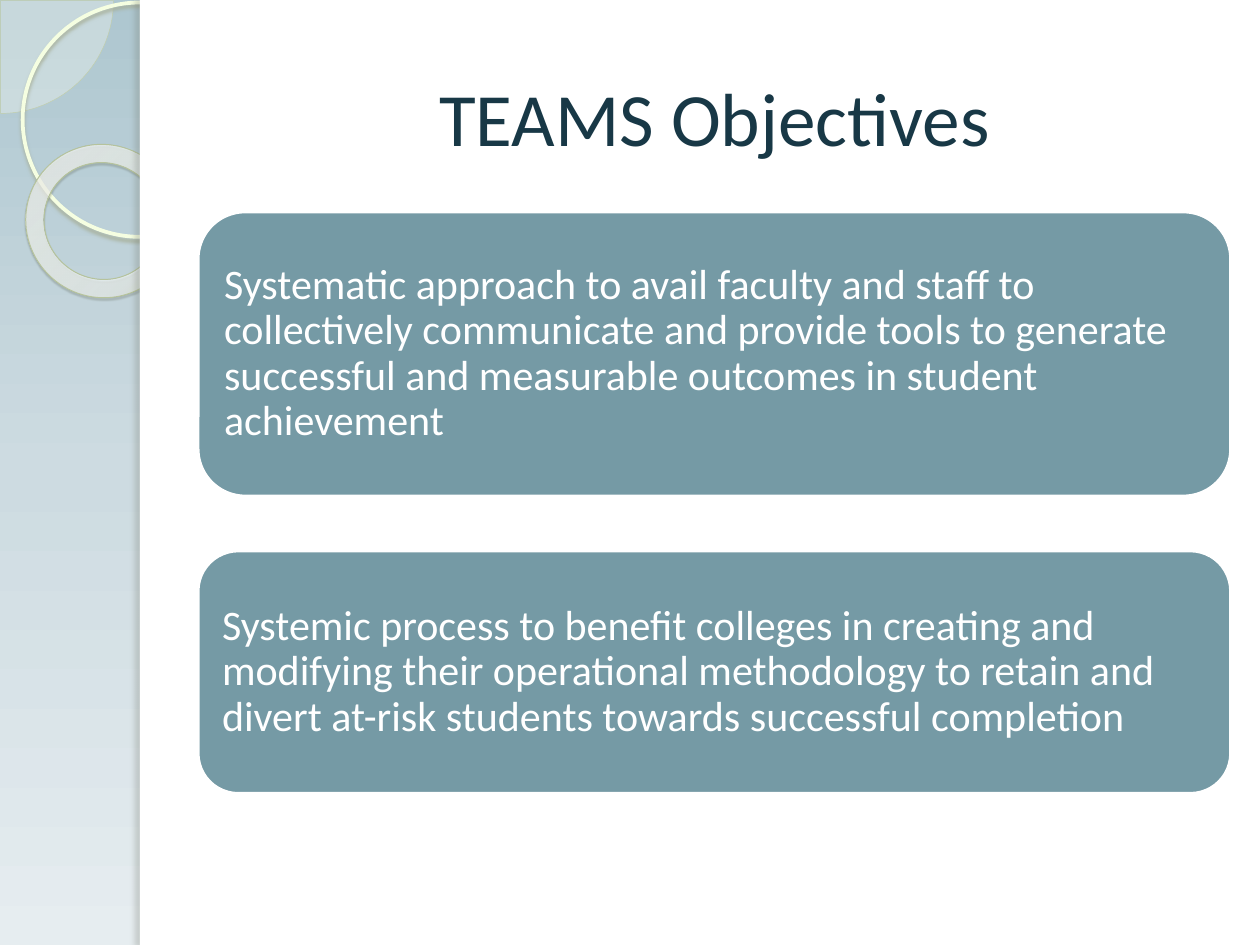
from lxml.etree import SubElement
from pptx import Presentation
from pptx.dml.color import RGBColor
from pptx.enum.shapes import MSO_SHAPE
from pptx.enum.text import MSO_ANCHOR, PP_ALIGN
from pptx.oxml.ns import qn
from pptx.util import Inches, Pt

# Content
HEADING = "TEAMS Objectives"
OBJECTIVES = [
    # text, top, height
    ("Systematic approach to avail faculty and staff to collectively communicate "
     "and provide tools to generate successful and measurable outcomes in student "
     "achievement", 1.68, 2.26),
    ("Systemic process to benefit colleges in creating and modifying their "
     "operational methodology to retain and divert at-risk students towards "
     "successful completion", 4.37, 1.93),
]
CONTENT_LEFT, CONTENT_WIDTH = 1.57, 8.2
PANEL_LEFT = 1.11

# Gradient stops: position, colour, opacity in percent
BACKDROP = [(0, "AEC7D0", 100), (50, "CDDBE1", 100), (100, "E6EDF0", 100)]
RING_GLOW = [(0, "FCFEF7", 70), (70, "FEFFFB", 55), (100, "CEE59D", 60)]

# Decoration, back to front; shadow: colour, opacity, blur, distance, angle
DECORATION = [
    dict(kind=MSO_SHAPE.PIE, box=(-0.89, -0.89, 1.79, 1.79), adjust=(0, 54.02),
         fill="FAFDF5", opacity=33, line=("C2CEA9", 0.25)),
    dict(kind=MSO_SHAPE.OVAL, box=(0.18, 0.02, 1.86, 1.86),
         line=("F5FEE1", 2.15), shadow=("A6AE96", 85, 2, 2, 90)),
    dict(kind=MSO_SHAPE.DONUT, box=(0.2, 1.15, 1.23, 1.21), adjust=(0.12,),
         rotation=38.6, stops=RING_GLOW, line=("B6C39C", 0.58),
         shadow=("535948", 35, 1, 1.2, 75)),
    dict(kind=MSO_SHAPE.RECTANGLE, box=(PANEL_LEFT, 0, 10 - PANEL_LEFT, 7.5),
         fill="FFFFFF"),
    dict(kind=MSO_SHAPE.RECTANGLE, box=(PANEL_LEFT, 0, 0.08, 7.5),
         fill="FFFFFF", shadow=("6F7367", 25, 3, 3, 180)),
]


def colour(hex_value):
    return RGBColor.from_string(hex_value)


def add_colour(parent, hex_value, opacity):
    node = SubElement(parent, qn("a:srgbClr"), val=hex_value)
    if opacity < 100:
        SubElement(node, qn("a:alpha"), val=str(opacity * 1000))


def set_gradient(fill, holder, stops, radial=False):
    """Give a fill the stops, running downwards or out from a far circle."""
    fill.gradient()
    gradient = holder.find(".//" + qn("a:gradFill"))
    for child in list(gradient):
        gradient.remove(child)
    stop_list = SubElement(gradient, qn("a:gsLst"))
    for position, hex_value, opacity in stops:
        stop = SubElement(stop_list, qn("a:gs"), pos=str(position * 1000))
        add_colour(stop, hex_value, opacity)
    if radial:
        circle = SubElement(gradient, qn("a:path"), path="circle")
        SubElement(circle, qn("a:fillToRect"),
                   l="-408000", t="-50000", r="508000", b="150000")
    else:
        SubElement(gradient, qn("a:lin"), ang="5400000", scaled="0")


def set_shadow(shape, hex_value, opacity, blur, distance, angle):
    effects = shape.element.spPr.find(qn("a:effectLst"))
    shadow = SubElement(effects, qn("a:outerShdw"), blurRad=str(Pt(blur)),
                        dist=str(Pt(distance)), dir=str(angle * 60000),
                        algn="tl", rotWithShape="0")
    add_colour(shadow, hex_value, opacity)


def add_part(slide, kind, box, fill=None, opacity=100, stops=None, line=None,
             shadow=None, adjust=(), rotation=0):
    shape = slide.shapes.add_shape(kind, *map(Inches, box))
    shape.shadow.inherit = False
    shape.rotation = rotation
    for index, value in enumerate(adjust):
        shape.adjustments[index] = value
    if stops:
        set_gradient(shape.fill, shape.element.spPr, stops, radial=True)
    elif fill:
        shape.fill.solid()
        shape.fill.fore_color.rgb = colour(fill)
        if opacity < 100:
            tint = shape.element.spPr.find(qn("a:solidFill")).find(qn("a:srgbClr"))
            SubElement(tint, qn("a:alpha"), val=str(opacity * 1000))
    else:
        shape.fill.background()
    if line:
        shape.line.color.rgb = colour(line[0])
        shape.line.width = Pt(line[1])
    else:
        shape.line.fill.background()
    if shadow:
        set_shadow(shape, *shadow)
    return shape


def write(shape, text, size, hex_value, frame_format, paragraph_format):
    frame = shape.text_frame
    frame.text = text
    paragraph = frame.paragraphs[0]
    font_format = dict(name="Calibri", size=Pt(size), bold=False)
    for target, values in ((frame, frame_format), (paragraph, paragraph_format),
                           (paragraph.runs[0].font, font_format)):
        for name, value in values.items():
            setattr(target, name, value)
    paragraph.runs[0].font.color.rgb = colour(hex_value)


def main():
    deck = Presentation()
    deck.slide_width, deck.slide_height = Inches(10), Inches(7.5)
    slide = deck.slides.add_slide(deck.slide_layouts[5])

    # Background and side decoration
    set_gradient(slide.background.fill, slide.element, BACKDROP)
    for part in DECORATION:
        add_part(slide, **part)

    # Title, brought in front of the white panel
    title = slide.shapes.title
    title.element.getparent().append(title.element)
    place = dict(left=CONTENT_LEFT, top=0.3, width=CONTENT_WIDTH, height=1.25)
    for side, value in place.items():
        setattr(title, side, Inches(value))
    middle = dict(word_wrap=True, vertical_anchor=MSO_ANCHOR.MIDDLE)
    write(title, HEADING, 43, "183846", middle, dict(alignment=PP_ALIGN.CENTER))

    # Objective cards
    margins = {f"margin_{side}": Inches(0.1)
               for side in ("left", "top", "right", "bottom")}
    for text, top, height in OBJECTIVES:
        card = add_part(slide, MSO_SHAPE.ROUNDED_RECTANGLE,
                        (CONTENT_LEFT, top, CONTENT_WIDTH, height),
                        fill="759AA5", line=("FFFFFF", 2))
        write(card, text, 24, "FFFFFF", {**middle, **margins},
              dict(alignment=PP_ALIGN.LEFT, line_spacing=0.9))

    deck.save("out.pptx")


if __name__ == "__main__":
    main()
